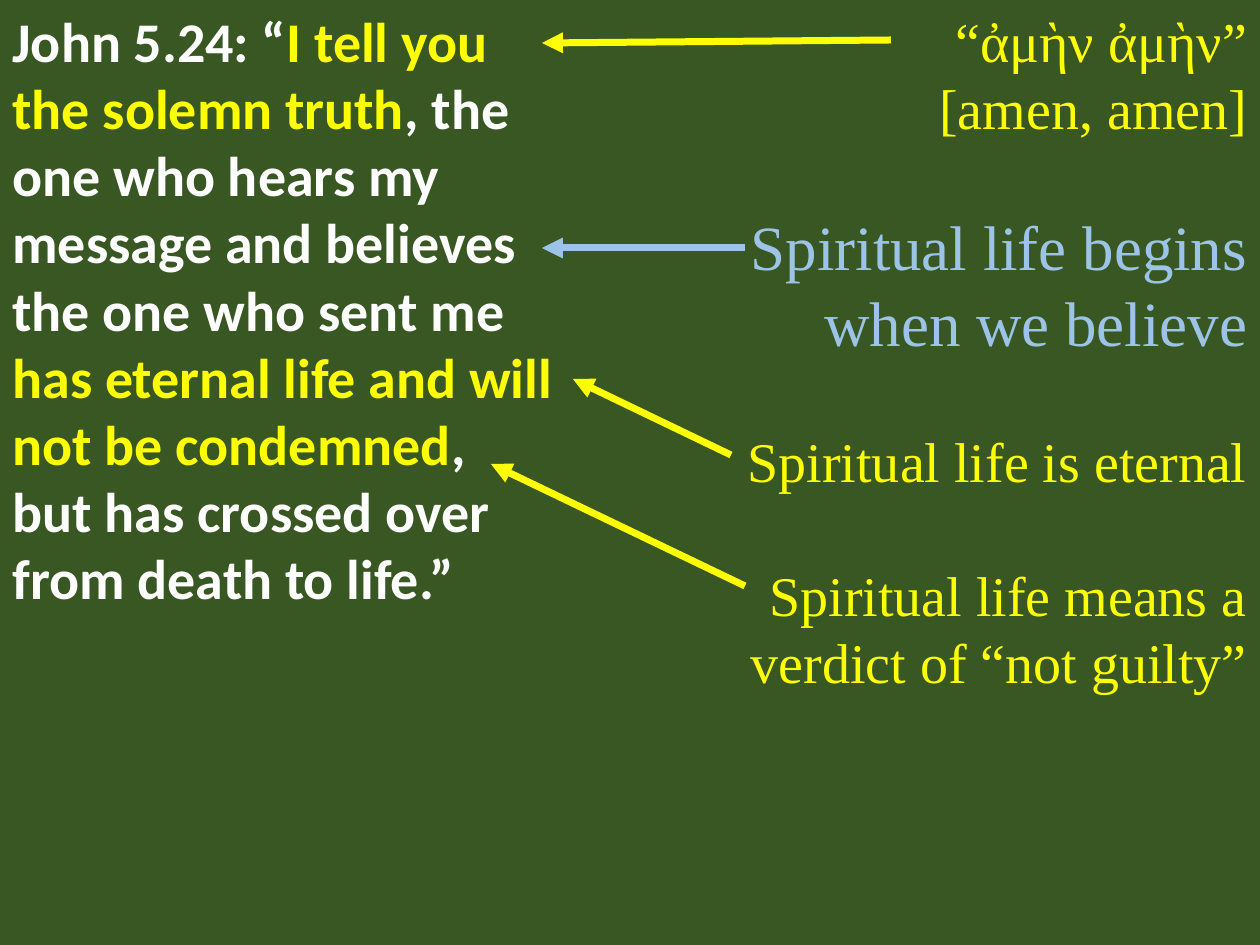
from lxml import etree
from pptx import Presentation
from pptx import util as u
from pptx.dml.color import RGBColor
from pptx.enum import shapes, text
from pptx.oxml.ns import qn

PX = 914400 // 126
COLORS = {"green": "385723", "white": "FFFFFF", "yellow": "FFFF00", "blue": "9DC3E6"}


def add_box(left, top, width, height):
    tf = s.shapes.add_textbox(left * PX, top * PX, width * PX, height * PX).text_frame
    tf.word_wrap = True
    tf.auto_size = text.MSO_AUTO_SIZE.NONE
    return tf


def style(r, font, size, color, bold=False):
    r.font.name = font
    r.font.size = u.Pt(size)
    r.font.bold = bold
    r.font.color.rgb = RGBColor.from_string(COLORS[color])


prs = Presentation()
prs.slide_width, prs.slide_height = 1260 * PX, 945 * PX
s = prs.slides.add_slide(prs.slide_layouts[6])
s.background.fill.solid()
s.background.fill.fore_color.rgb = RGBColor.from_string(COLORS["green"])

verse = [
    [
        ("John 5.24: “", "white"),
        ("I tell you the solemn truth", "yellow"),
        (", the one who hears my message and believes the one who sent me ", "white"),
        ("has eternal life and will not be condemned", "yellow"),
        (",", "white"),
    ],
    [("but has crossed over from death to life.”", "white")],
]
tf = add_box(0, 0, 573, 624)
for i, parts in enumerate(verse):
    p = tf.add_paragraph() if i else tf.paragraphs[0]
    for words, color in parts:
        r = p.add_run()
        r.text = words
        style(r, "Calibri", 32, color, True)

notes = [
    ("“ἀμὴν ἀμὴν”", 32, "yellow", 0),
    ("[amen, amen]", 32, "yellow", 0),
    ("Spiritual life begins when we believe", 36, "blue", 38.4),
    ("Spiritual life is eternal", 32, "yellow", 38.4),
    ("Spiritual life means a verdict of “not guilty”", 32, "yellow", 38.4),
]
tf = add_box(703, 0, 557, 1005)
for i, (words, size, color, gap) in enumerate(notes):
    p = tf.add_paragraph() if i else tf.paragraphs[0]
    p.text = words
    p.alignment = text.PP_ALIGN.RIGHT
    p.space_before = u.Pt(gap)
    style(p.runs[0], "Times New Roman", size, color)

arrows = [
    (891, 40, 542, 43, "yellow"),
    (745, 248, 542, 248, "blue"),
    (731, 455, 573, 379, "yellow"),
    (745, 586, 491, 464, "yellow"),
]
for x1, y1, x2, y2, color in arrows:
    sp = s.shapes.add_connector(
        shapes.MSO_CONNECTOR.STRAIGHT, x1 * PX, y1 * PX, x2 * PX, y2 * PX
    )
    sp.line.width = u.Pt(4)
    sp.line.color.rgb = RGBColor.from_string(COLORS[color])
    etree.SubElement(sp.line._get_or_add_ln(), qn("a:tailEnd"), type="triangle")
    etree.SubElement(sp._element.spPr, qn("a:effectLst"))

prs.save("out.pptx")
